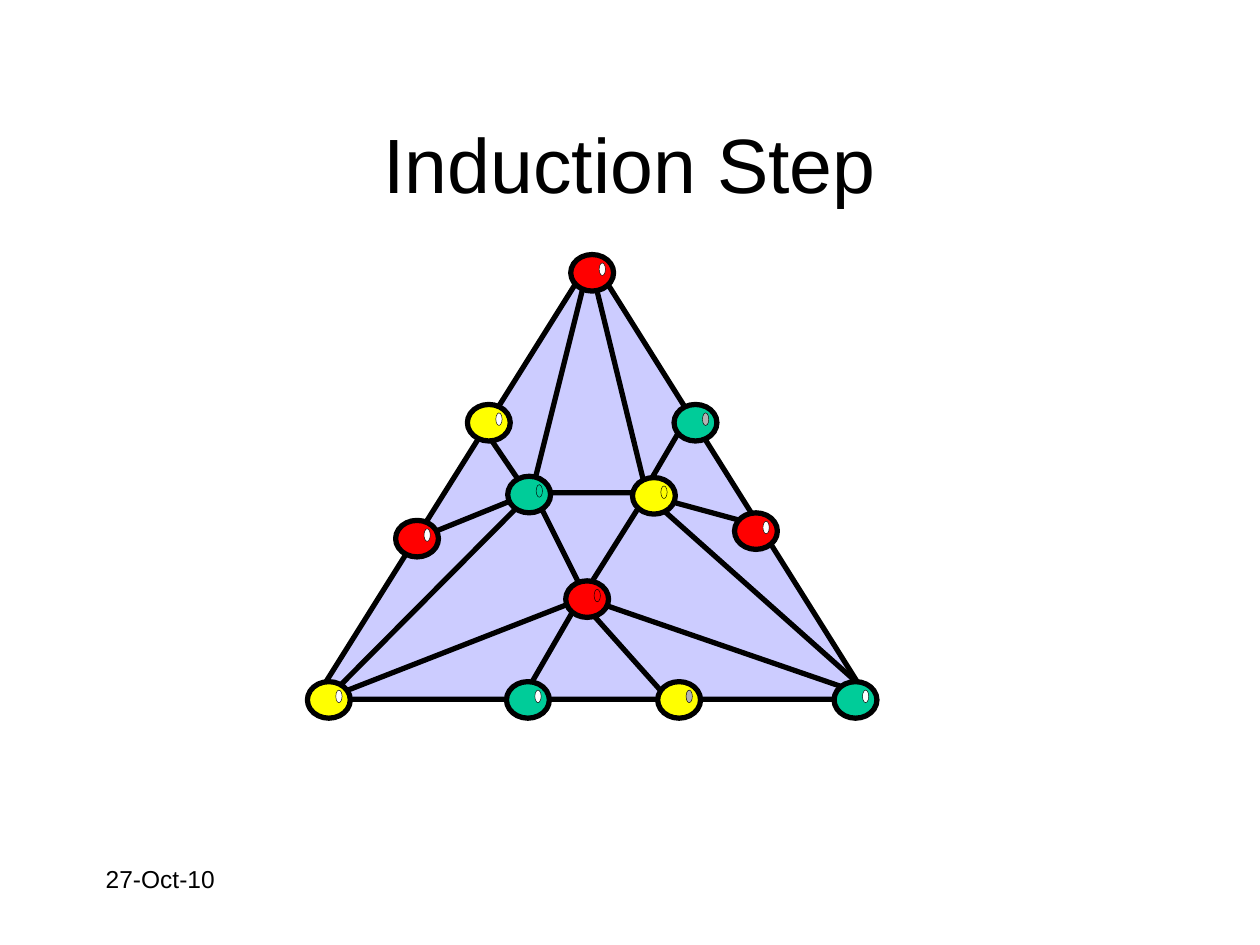
import dataclasses
import typing

import lxml.etree
import pptx
import pptx.dml.color
import pptx.enum.shapes
import pptx.enum.text
import pptx.oxml.ns
import pptx.util

COLS, ROWS = 100, 75
RED, GOLD, GREEN = "FF0000", "FFFF00", "00CC99"
WHITE, GRAY, BLACK, LILAC = "FFFFFF", "B2B2B2", "000000", "CCCCFF"
BALL_W, BALL_H = 3.4, 2.9
SHINE_W, SHINE_H = 0.5, 1
SHINE_X, SHINE_Y = 2.25, 0.67
EDGE, HAIR = 3, 0.25
Point = tuple[float, float]


@dataclasses.dataclass
class Ball:
    left: float
    top: float
    fill: str
    shine: str
    inner: bool = False


@dataclasses.dataclass
class Edge:
    start: Point
    end: Point


HUB, EAST, WEST = (46, 47.6), (51, 39.2), (41.9, 39.2)

FACES = [
    [(46.5, 47.4), (42.4, 39.2), (42, 39.3), (26, 55.4)],
    [(51.3, 39.3), (46.2, 47.4), (69.4, 55.4)],
    [(42.2, 39.1), (51.3, 39.1), (46.8, 20.7)],
]
EDGES = [
    Edge(HUB, (52.7, 55.1)),
    Edge(HUB, (41.2, 55.9)),
    Edge(EAST, (60.2, 41.7)),
    Edge(EAST, (54.4, 33.4)),
    Edge(WEST, (38.5, 34.2)),
    Edge(WEST, (33.5, 42.6)),
]
BALLS = [
    Ball(66.2, 54.1, GREEN, WHITE),
    Ball(52.2, 54.1, GOLD, GRAY),
    Ball(40.2, 54.1, GREEN, WHITE),
    Ball(24.4, 54.1, GOLD, WHITE),
    Ball(58.3, 40.7, RED, WHITE),
    Ball(31.4, 41.3, RED, WHITE),
    Ball(44.9, 46.1, RED, RED, True),
    Ball(50.2, 37.9, GOLD, GOLD, True),
    Ball(40.3, 37.8, GREEN, GREEN, True),
    Ball(45.3, 20.2, RED, WHITE),
    Ball(53.5, 32.1, GREEN, GRAY),
    Ball(37.1, 32.1, GOLD, WHITE),
]

deck = pptx.Presentation()
deck.slide_width = pptx.util.Inches(10)
deck.slide_height = pptx.util.Inches(7.5)
slide = deck.slides.add_slide(deck.slide_layouts[5])


def col(x: float) -> int:
    return round(deck.slide_width * x / COLS)


def row(y: float) -> int:
    return round(deck.slide_height * y / ROWS)


def box(left: float, top: float, wide: float, high: float) -> tuple[int, ...]:
    return col(left), row(top), col(wide), row(high)


def tint(code: str) -> pptx.dml.color.RGBColor:
    return pptx.dml.color.RGBColor.from_string(code)


def apply(item: typing.Any, form: dict[str, typing.Any]) -> None:
    for name, value in form.items():
        setattr(item, name, value)


def ink(item: typing.Any, width: float) -> None:
    item.line.color.rgb = tint(BLACK)
    item.line.width = pptx.util.Pt(width)


def paint(shape: typing.Any, fill: str | None, width: float) -> None:
    shape.shadow.inherit = False
    if fill:
        shape.fill.solid()
        shape.fill.fore_color.rgb = tint(fill)
    else:
        shape.fill.background()
    ink(shape, width)


def draw_face(points: list[Point]) -> None:
    spots = [(col(x), row(y)) for x, y in points]
    pen = slide.shapes.build_freeform(*spots[0])
    pen.add_line_segments(spots[1:], close=True)
    paint(pen.convert_to_shape(), None, EDGE)


def draw_edge(edge: Edge) -> None:
    (x1, y1), (x2, y2) = edge.start, edge.end
    line = slide.shapes.add_connector(
        pptx.enum.shapes.MSO_CONNECTOR.STRAIGHT, col(x1), row(y1), col(x2), row(y2)
    )
    ink(line, EDGE)
    lxml.etree.SubElement(line._element.spPr, pptx.oxml.ns.qn("a:effectLst"))


def draw_ball(ball: Ball) -> None:
    home = slide.shapes.add_group_shape().shapes if ball.inner else slide.shapes
    oval = pptx.enum.shapes.MSO_SHAPE.OVAL
    body = home.add_shape(oval, *box(ball.left, ball.top, BALL_W, BALL_H))
    paint(body, ball.fill, EDGE)
    spot = box(ball.left + SHINE_X, ball.top + SHINE_Y, SHINE_W, SHINE_H)
    paint(home.add_shape(oval, *spot), ball.shine, HAIR)


def write(shape: typing.Any, text: str, size: float, frame: dict, para: dict) -> None:
    apply(shape.text_frame, {"word_wrap": True, **frame})
    line = shape.text_frame.paragraphs[0]
    apply(line, para)
    run = line.add_run()
    run.text = text
    apply(run.font, {"name": "Arial", "size": pptx.util.Pt(size)})
    run.font.color.rgb = tint(BLACK)


title = slide.shapes.title
apply(title, dict(zip(("left", "top", "width", "height"), box(7.5, 6.7, 85, 12.5))))
write(
    title,
    "Induction Step",
    44,
    {"vertical_anchor": pptx.enum.text.MSO_ANCHOR.MIDDLE},
    {"alignment": pptx.enum.text.PP_ALIGN.CENTER},
)
date = slide.shapes.add_textbox(*box(7.4, 68.1, 20.8, 5))
write(date, "27-Oct-10", 14, {}, {})

hull = slide.shapes.add_shape(
    pptx.enum.shapes.MSO_SHAPE.ISOSCELES_TRIANGLE, *box(25, 20.5, 43.9, 35)
)
paint(hull, LILAC, EDGE)
for face in FACES:
    draw_face(face)
for edge in EDGES:
    draw_edge(edge)
for ball in BALLS:
    draw_ball(ball)

deck.save("out.pptx")
